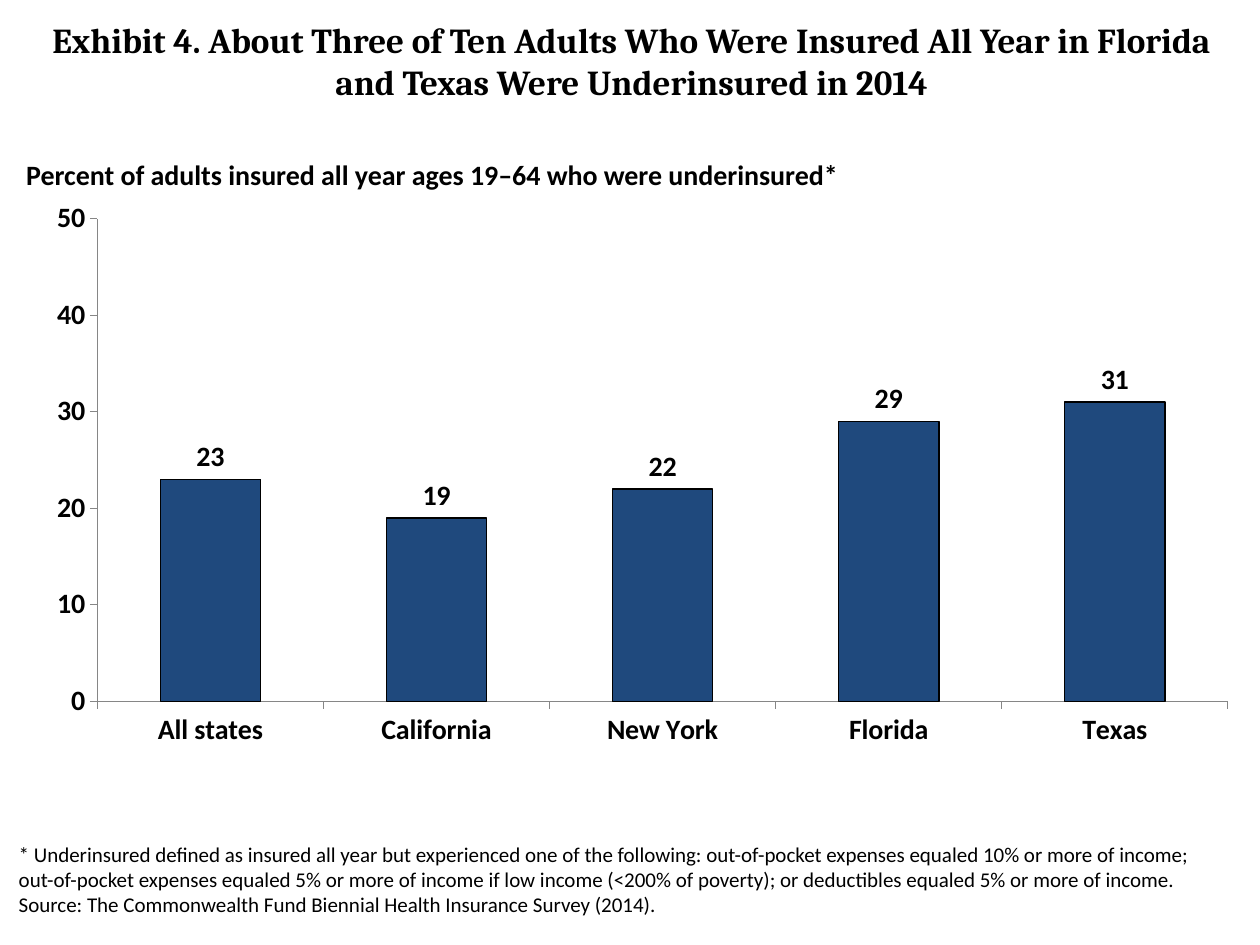
from dataclasses import dataclass

from lxml.etree import SubElement
from pptx import Presentation
from pptx.chart.data import CategoryChartData
from pptx.dml.color import RGBColor
from pptx.enum.chart import XL_CHART_TYPE as ChartType, XL_LABEL_POSITION as LabelPosition
from pptx.enum.chart import XL_TICK_MARK as TickMark
from pptx.enum.text import MSO_AUTO_SIZE as AutoSize, PP_ALIGN as Align
from pptx.oxml.ns import qn
from pptx.util import Inches, Pt

COLORS = {"text": "000000", "bar": "1F497D", "outline": "000000", "axis": "868686"}

UNDERINSURED = {"All states": 23, "California": 19, "New York": 22, "Florida": 29, "Texas": 31}

PLOT_LAYOUT = {
    "layoutTarget": "inner", "xMode": "edge", "yMode": "edge",
    "x": 0.063, "y": 0.066, "w": 0.937, "h": 0.751,
}


@dataclass
class Caption:
    """Text block with its place and type style."""
    paragraphs: list[str]
    left: float
    top: float
    width: float
    height: float
    size: int
    font: str = "Calibri"
    bold: bool = False
    align: Align = Align.LEFT


CAPTIONS = [
    Caption(["Exhibit 4. About Three of Ten Adults Who Were Insured All Year in Florida "
             "and Texas Were Underinsured in 2014"],
            0.11, 0.1, 9.81, 0.77, 20, "Cambria", True, Align.CENTER),
    Caption(["* Underinsured defined as insured all year but experienced one of the following: "
             "out-of-pocket expenses equaled 10% or more of income; out-of-pocket expenses "
             "equaled 5% or more of income if low income (<200% of poverty); or deductibles "
             "equaled 5% or more of income.",
             "Source: The Commonwealth Fund Biennial Health Insurance Survey (2014)."],
            0.05, 6.63, 9.58, 0.71, 12),
    Caption(["Percent of adults insured all year ages 19–64 who were underinsured*"],
            0.11, 1.2, 7.47, 0.37, 16, bold=True),
]


def color(name: str) -> RGBColor:
    """Return the named palette colour."""
    return RGBColor.from_string(COLORS[name])


def style_font(font, size: int, face: str, bold: bool) -> None:
    """Apply face, size, weight and text colour."""
    font.name, font.size, font.bold = face, Pt(size), bold
    font.color.rgb = color("text")


def add_caption(slide, caption: Caption) -> None:
    """Add one text block to the slide."""
    box = slide.shapes.add_textbox(Inches(caption.left), Inches(caption.top),
                                   Inches(caption.width), Inches(caption.height))
    frame = box.text_frame
    frame.word_wrap = True
    frame.auto_size = AutoSize.SHAPE_TO_FIT_TEXT
    frame.text = "\n".join(caption.paragraphs)
    for paragraph in frame.paragraphs:
        paragraph.alignment = caption.align
        for run in paragraph.runs:
            style_font(run.font, caption.size, caption.font, caption.bold)


def set_plot_layout(chart) -> None:
    """Fix the inner plot area inside the chart frame."""
    plot_area = chart.element.find(".//" + qn("c:plotArea"))
    layout = plot_area.find(qn("c:layout"))
    if layout is None:
        layout = SubElement(plot_area, qn("c:layout"))
        plot_area.insert(0, layout)
    manual = SubElement(layout, qn("c:manualLayout"))
    for tag, value in PLOT_LAYOUT.items():
        SubElement(manual, qn(f"c:{tag}")).set("val", str(value))


def add_underinsured_chart(slide) -> None:
    """Add the column chart of underinsured adults by state."""
    data = CategoryChartData(number_format="0")
    data.categories = list(UNDERINSURED)
    data.add_series("Series 1", list(UNDERINSURED.values()))
    chart = slide.shapes.add_chart(ChartType.COLUMN_CLUSTERED, Inches(0.17), Inches(1.4),
                                   Inches(9.58), Inches(5.1), data).chart
    chart.has_title = chart.has_legend = False
    style_font(chart.font, 16, "Calibri", True)
    set_plot_layout(chart)

    for axis in (chart.category_axis, chart.value_axis):
        axis.has_major_gridlines = False
        axis.major_tick_mark = TickMark.OUTSIDE
        axis.minor_tick_mark = TickMark.NONE
        axis.format.line.color.rgb = color("axis")
        axis.format.line.width = Pt(0.75)
    percent_axis = chart.value_axis
    percent_axis.minimum_scale, percent_axis.maximum_scale = 0, 50
    percent_axis.major_unit = 10
    percent_axis.tick_labels.number_format = "0"
    percent_axis.tick_labels.number_format_is_linked = False

    plot = chart.plots[0]
    plot.gap_width = 125
    plot.vary_by_categories = False
    bars = plot.series[0]
    bars.format.fill.solid()
    bars.format.fill.fore_color.rgb = color("bar")
    bars.format.line.color.rgb = color("outline")
    bars.format.line.width = Pt(0.75)
    labels = bars.data_labels
    labels.show_value = True
    labels.number_format = "0"
    labels.number_format_is_linked = False
    labels.position = LabelPosition.OUTSIDE_END


def main() -> None:
    """Build and save the slide."""
    deck = Presentation()
    deck.slide_width, deck.slide_height = Inches(10), Inches(7.5)
    slide = deck.slides.add_slide(deck.slide_layouts[6])
    add_underinsured_chart(slide)
    for caption in CAPTIONS:
        add_caption(slide, caption)
    deck.save("out.pptx")


if __name__ == "__main__":
    main()
